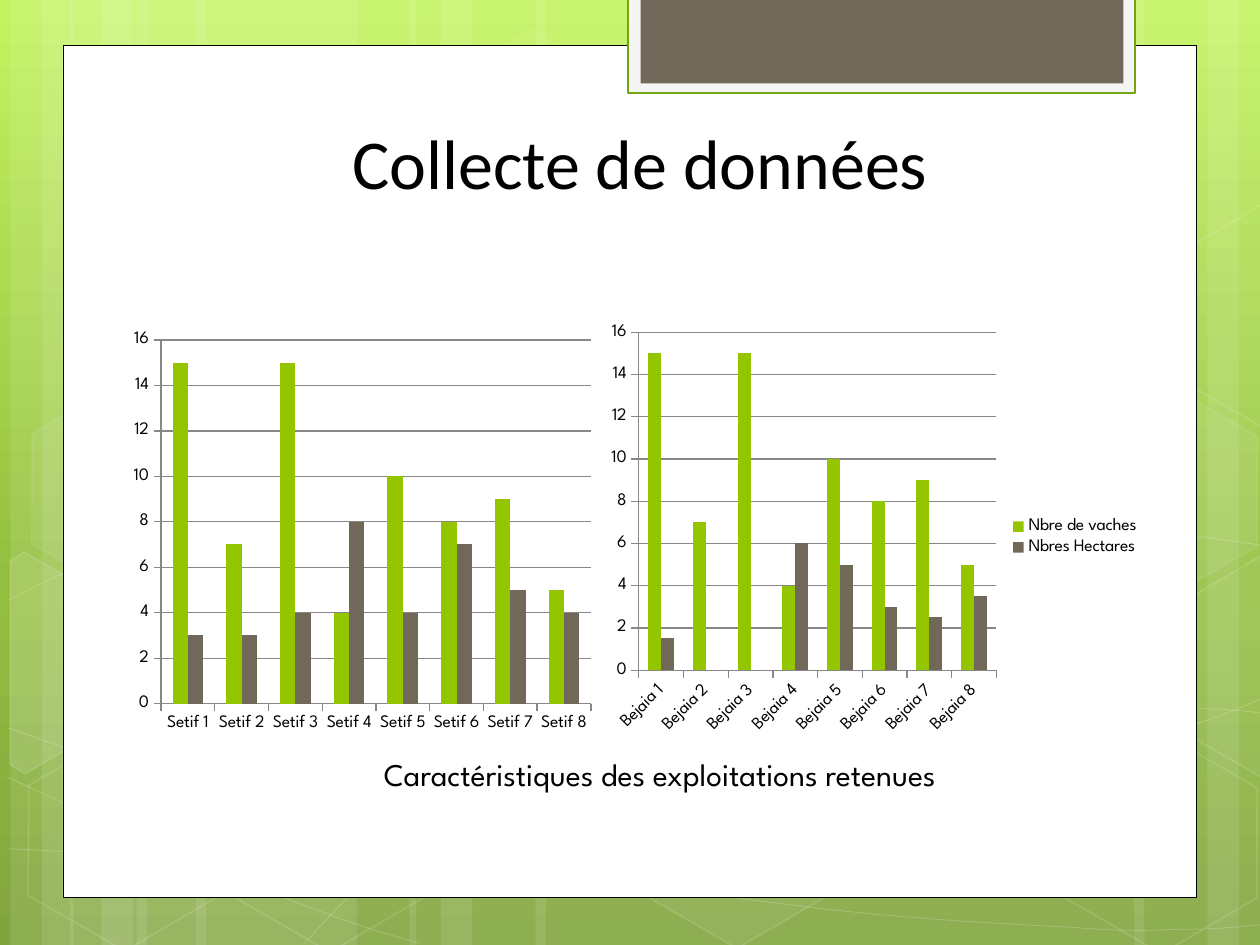
from copy import deepcopy
from math import cos, radians, sin

from lxml import etree
from pptx import Presentation
from pptx.chart.data import CategoryChartData
from pptx.dml.color import RGBColor
from pptx.enum import chart as ch, shapes, text
from pptx.oxml.ns import qn
from pptx.util import Pt

WHITE = RGBColor(0xFF, 0xFF, 0xFF)
BLACK = RGBColor(0, 0, 0)
PALE = RGBColor(0xF5, 0xF5, 0xF5)
LIME = RGBColor(0x94, 0xC6, 0x00)
BROWN = RGBColor(0x71, 0x68, 0x5A)
GREEN = RGBColor(0x74, 0xA5, 0x10)
GREY = RGBColor(0x87, 0x87, 0x87)
BACKGROUND = [(0, RGBColor(0xC3, 0xF3, 0x5F)), (62, RGBColor(0x93, 0xBF, 0x3F)),
              (100, RGBColor(0x81, 0xA5, 0x3E))]
BODY_FONT = "League Spartan"
TILT = 30

# left, width
STRIPES = [(78, 126), (6, 36), (24, 60), (112, 126), (40, 36), (58, 60),
           (528, 126), (690, 36), (648, 60), (306, 222), (234, 36), (252, 60)]
# left, top, fill opacity, line opacity
HEXAGONS = [(240.5, 26, 4, 8), (358, 424, 6, 12), (8, 425.5, 0, 12), (10, 224.6, 7, 8),
            (125.3, 426.2, 0, 12), (542.2, 326.2, 10, 12), (600.5, 427, 0, 12),
            (600.5, 226, 7, 8)]
# tilted outlines of the hexagons cut by the slide edges
LEFT_EDGE = [(5.8, 320.4), (13.7, 315.4), (69.1, 347), (68.4, 410.4), (14.4, 442.1),
             (5.8, 437)]
RIGHT_EDGE = [(666.7, 349.2), (720.7, 317.5), (726.5, 321.1), (726.5, 441.4),
              (721.4, 444.2), (666.7, 412.6)]
# start point, then two control points and an end point for each segment
CURVES = [
    [(5, 485), (44, 487), (83, 489), (137, 488), (191, 487), (258, 486), (330, 479),
     (402, 472), (504, 458), (570, 444), (636, 431), (703, 409), (725, 397)],
    [(5, 343), (26, 332), (47, 321), (87, 310), (128, 300), (186, 284), (250, 279),
     (314, 274), (392, 273), (471, 279), (550, 284), (682, 307), (725, 312)],
    [(4, 444), (91, 484), (178, 523), (240, 539)],
    [(5, 416), (27, 424), (50, 432), (92, 444), (134, 454), (197, 472), (257, 485),
     (317, 497), (392, 510), (452, 517), (512, 525), (576, 528), (614, 530),
     (652, 533), (662, 531), (680, 531), (699, 531), (712, 529), (725, 528)],
    [(174, 539), (187, 525), (200, 510), (217, 498), (235, 485), (259, 470), (279, 460),
     (300, 450), (312, 446), (338, 438), (364, 431), (413, 421), (438, 416),
     (464, 411), (467, 411), (490, 410), (512, 408), (547, 405), (572, 405),
     (597, 404), (638, 405), (638, 405), (654, 405), (670, 405), (686, 405),
     (699, 405), (711, 406), (724, 408)],
]


def paint(fill, color, opacity=100):
    """Fill solidly with an opacity in percent; 0 leaves the fill empty."""
    if not opacity:
        fill.background()
        return
    fill.solid()
    fill.fore_color.rgb = color
    if opacity < 100:
        clr = fill._xPr.find(qn("a:solidFill"))[0]
        etree.SubElement(clr, qn("a:alpha"), val=str(opacity * 1000))


def style(sp, fill=WHITE, opacity=100, line=None, width=1, line_opacity=100):
    sp.shadow.inherit = False
    paint(sp.fill, fill, opacity)
    if line is None:
        sp.line.fill.background()
    else:
        sp.line.width = Pt(width)
        paint(sp.line.fill, line, line_opacity)
    return sp


def add_box(slide, box, kind=shapes.MSO_SHAPE.RECTANGLE, **fmt):
    return style(slide.shapes.add_shape(kind, *map(Pt, box)), **fmt)


def add_outline(slide, points, close, **fmt):
    pts = [(Pt(x), Pt(y)) for x, y in points]
    builder = slide.shapes.build_freeform(*pts[0])
    builder.add_line_segments(pts[1:], close=close)
    return style(builder.convert_to_shape(), **fmt)


def add_curve(slide, nodes, **fmt):
    """Join the nodes, then turn each three line segments into one Bézier segment."""
    sp = add_outline(slide, nodes, False, opacity=0, **fmt)
    lines = list(sp._element.iter(qn("a:lnTo")))
    for i in range(0, len(lines), 3):
        segment = etree.Element(qn("a:cubicBezTo"))
        lines[i].addprevious(segment)
        for line in lines[i:i + 3]:
            segment.append(line[0])
            line.getparent().remove(line)


def add_tilted_outline(slide, points, center, **fmt):
    """Place the points as given, in a shape that is turned about its center."""
    cx, cy = center
    c, s = cos(radians(TILT)), sin(radians(TILT))
    upright = [(cx + (x - cx) * c + (y - cy) * s, cy - (x - cx) * s + (y - cy) * c)
               for x, y in points]
    add_outline(slide, upright, True, **fmt).rotation = TILT


def set_background(slide):
    fill = slide.background.fill
    fill.gradient()
    fill.gradient_angle = 270
    stops = fill._fill._gradFill.find(qn("a:gsLst"))
    stops.insert(1, deepcopy(stops[0]))
    for stop, (position, color) in zip(fill.gradient_stops, BACKGROUND):
        stop.position = position / 100
        stop.color.rgb = color


def draw_backdrop(slide):
    for left, width in STRIPES:
        add_box(slide, (left, 0, width, 540), opacity=10)
    for nodes in CURVES:
        add_curve(slide, nodes, line=WHITE, width=0.5, line_opacity=20)
    for left, top, opacity, line_opacity in HEXAGONS:
        sp = add_box(slide, (left, top, 126, 109.4), shapes.MSO_SHAPE.HEXAGON,
                     opacity=opacity, line=WHITE, line_opacity=line_opacity)
        sp.adjustments[0] = 0.285
        sp.rotation = TILT
    upper_right = [(x, y - 200.5) for x, y in RIGHT_EDGE]
    for points, center, opacity in ((LEFT_EDGE, (25.9, 385.2), 10),
                                    (RIGHT_EDGE, (709.2, 374.4), 4),
                                    (upper_right, (709.2, 173.9), 0)):
        add_tilted_outline(slide, points, center, opacity=opacity,
                           line=WHITE, line_opacity=12)


def draw_panel(slide, x, y, w, h):
    add_box(slide, (x, y, w, h), line=BLACK, width=0.5)
    add_box(slide, (x + 323, -1.4, 289.7, 54.7), fill=PALE, line=GREEN, width=1.25)
    add_box(slide, (x + 330.1, -1.4, 275.9, 49), fill=BROWN)


def write(sp, content, box, size, font, anchor=text.MSO_ANCHOR.TOP):
    sp.left, sp.top, sp.width, sp.height = map(Pt, box)
    tf = sp.text_frame
    tf.word_wrap = True
    tf.auto_size = text.MSO_AUTO_SIZE.NONE
    tf.vertical_anchor = anchor
    p = tf.paragraphs[0]
    p.alignment = text.PP_ALIGN.CENTER
    r = p.add_run()
    r.text = content
    r.font.size, r.font.name, r.font.color.rgb = Pt(size), font, BLACK


def add_farm_chart(slide, box, place, series, legend=False):
    data = CategoryChartData()
    data.categories = [f"{place} {n}" for n in range(1, 9)]
    for name, values in series:
        data.add_series(name, values)
    chart = slide.shapes.add_chart(ch.XL_CHART_TYPE.COLUMN_CLUSTERED,
                                   *map(Pt, box), data).chart
    chart.font.size, chart.font.name, chart.font.color.rgb = Pt(10), BODY_FONT, BLACK
    chart.has_title = False
    chart.has_legend = legend
    if legend:
        chart.legend.position = ch.XL_LEGEND_POSITION.RIGHT
        chart.legend.include_in_layout = False
    plot = chart.plots[0]
    plot.gap_width, plot.overlap, plot.vary_by_categories = 150, 0, False
    for s, color in zip(plot.series, (LIME, BROWN)):
        paint(s.format.fill, color)
    values = chart.value_axis
    values.minimum_scale, values.maximum_scale, values.major_unit = 0, 16, 2
    for axis in (values, chart.category_axis):
        axis.major_tick_mark = ch.XL_TICK_MARK.OUTSIDE
    for part in (values, values.major_gridlines, chart.category_axis):
        part.format.line.width = Pt(0.75)
        part.format.line.color.rgb = GREY


def main():
    prs = Presentation()
    prs.slide_width, prs.slide_height = Pt(720), Pt(540)
    slide = prs.slides.add_slide(prs.slide_layouts[5])
    set_background(slide)
    draw_backdrop(slide)
    draw_panel(slide, 36, 25.9, 648, 487)
    title = slide.shapes.title
    slide.shapes._spTree.append(title._element)  # bring in front of the panel
    write(title, "Collecte de données ", (93.6, 48.7, 553, 71.3), 40, "Calibri",
          text.MSO_ANCHOR.BOTTOM)
    cows = [15, 7, 15, 4, 10, 8, 9, 5]
    add_farm_chart(slide, (70.9, 185, 272.2, 238), "Setif",
                   [("Series 1", cows), ("Series 2", [3, 3, 4, 8, 4, 7, 5, 4])])
    add_farm_chart(slide, (343, 185, 317.3, 243.8), "Bejaia",
                   [("Nbre de vaches", cows),
                    ("Nbres Hectares ", [1.5, 0, 0, 6, 5, 3, 2.5, 3.5])], legend=True)
    caption = slide.shapes.add_textbox(0, 0, 0, 0)
    write(caption, "Caractéristiques des exploitations retenues",
          (105, 427.7, 544.3, 29), 18, BODY_FONT)
    prs.save("out.pptx")


if __name__ == "__main__":
    main()
